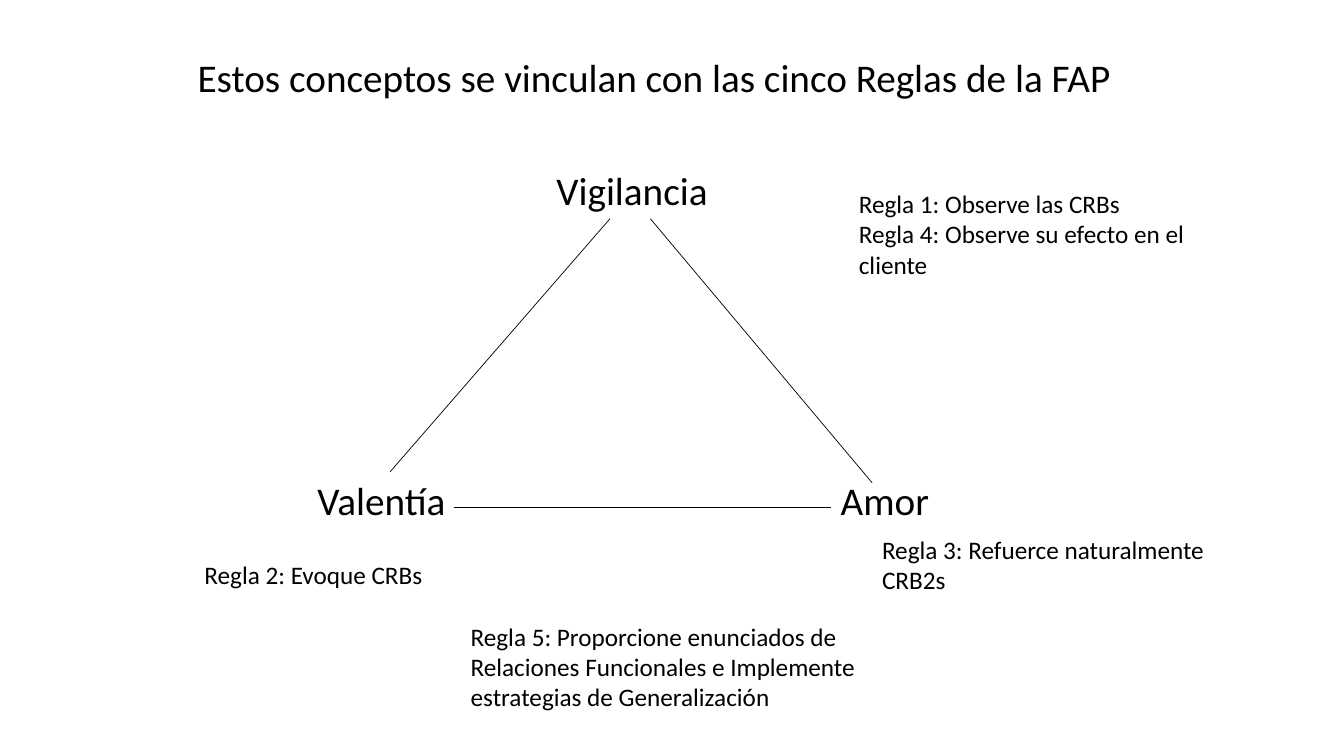
from pptx import Presentation
from pptx.dml.color import RGBColor as RGB
from pptx.enum.text import MSO_ANCHOR as Anchor, MSO_AUTO_SIZE as Fit, PP_ALIGN as Align
from pptx.enum.shapes import MSO_CONNECTOR as Conn
from pptx.oxml.ns import qn
from pptx.util import Inches, Pt
from lxml import etree

COLORS = {"ink": "000000", "paper": "FFFFFF"}

deck = Presentation()
deck.slide_width, deck.slide_height = Inches(13.33), Inches(7.5)
slide = deck.slides.add_slide(deck.slide_layouts[5])
slide.background.fill.solid()
slide.background.fill.fore_color.rgb = RGB.from_string(COLORS["paper"])


def write(text, box, size=18, shape=None):
    """Fill the given shape, or a new text box, with one paragraph per line."""
    left, top, width, height = [Inches(n) for n in box]
    if shape is None:
        shape = slide.shapes.add_textbox(left, top, width, height)
    shape.left, shape.top, shape.width, shape.height = left, top, width, height
    frame = shape.text_frame
    frame.text = text
    frame.word_wrap = True
    frame.auto_size = Fit.SHAPE_TO_FIT_TEXT
    frame.vertical_anchor = Anchor.TOP
    for para in frame.paragraphs:
        para.alignment = Align.LEFT
        para.font.size = Pt(size)
        para.font.name = "Calibri"
        para.font.color.rgb = RGB.from_string(COLORS["ink"])


write("Estos conceptos se vinculan con las cinco Reglas de la FAP",
      (1.86, 0.48, 9.61, 0.57), size=28, shape=slide.shapes.title)

# Triangle corners
corners = [
    ("Vigilancia", (5.42, 1.6, 2.48, 0.57)),
    ("Valentía", (3.05, 4.68, 1.92, 0.57)),
    ("Amor", (8.24, 4.68, 1.4, 0.57)),
]
for name, box in corners:
    write(name, box, size=28)

# Triangle sides
sides = [
    (3.87, 4.68, 6.05, 2.17),
    (6.45, 2.17, 8.65, 4.79),
    (4.5, 5.03, 8.24, 5.03),
]
for side in sides:
    line = slide.shapes.add_connector(Conn.STRAIGHT, *[Inches(n) for n in side])
    line.line.color.rgb = RGB.from_string(COLORS["ink"])
    line.line.width = Pt(0.5)
    etree.SubElement(line._element.spPr, qn("a:effectLst"))

# Rules beside the corners
rules = [
    ("Regla 1: Observe las CRBs\nRegla 4: Observe su efecto en el cliente",
     (8.42, 1.82, 3.53, 1.01)),
    ("Regla 3: Refuerce naturalmente CRB2s", (8.65, 5.25, 3.53, 0.71)),
    ("Regla 2: Evoque CRBs", (1.93, 5.5, 2.64, 0.4)),
    ("Regla 5: Proporcione enunciados de Relaciones Funcionales e Implemente "
     "estrategias de Generalización", (4.57, 6.11, 4.93, 1.01)),
]
for rule, box in rules:
    write(rule, box)

deck.save("out.pptx")
